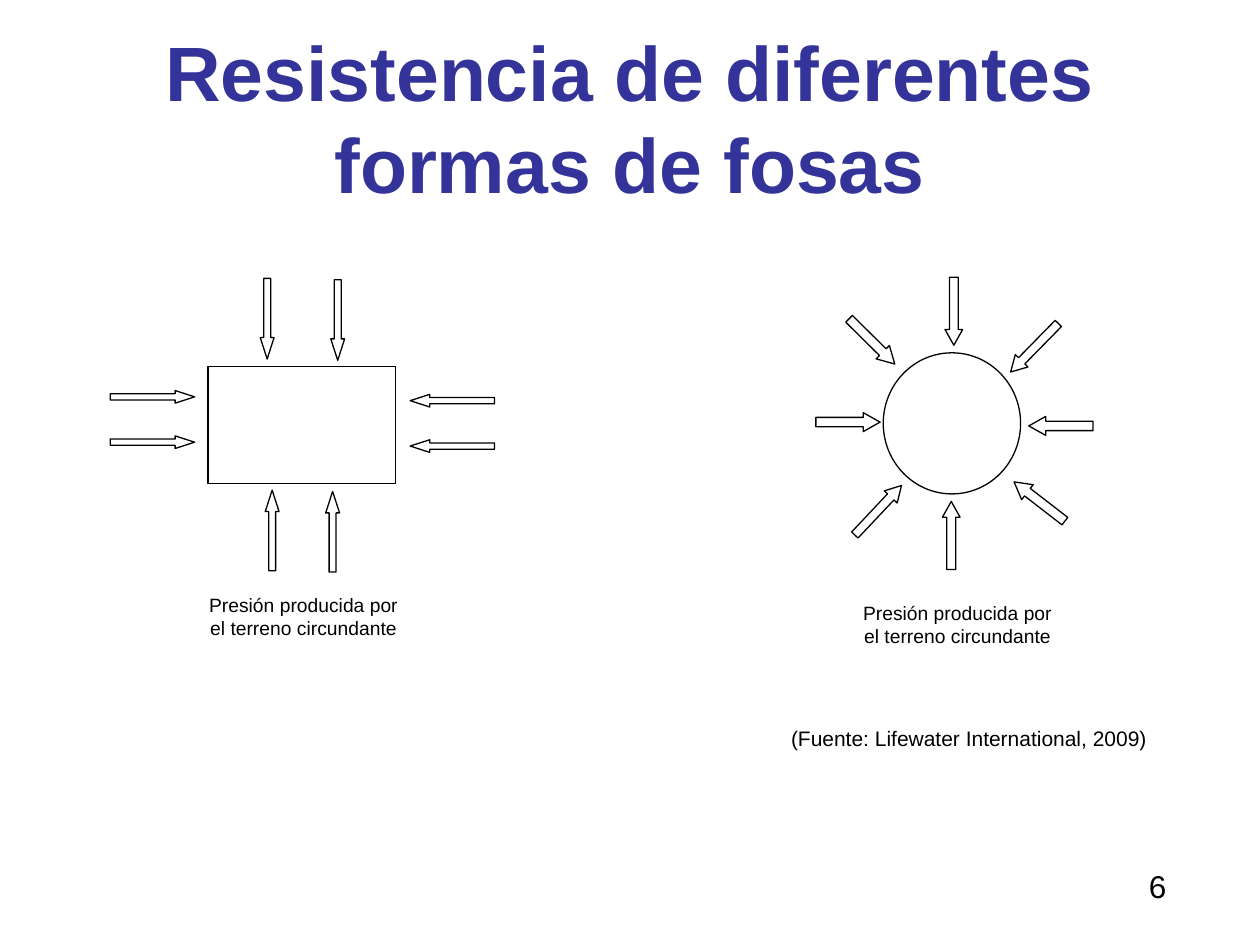
from pptx import Presentation
from pptx.dml.color import RGBColor
from pptx.enum import shapes, text
from pptx.util import Inches, Pt

BLUE = RGBColor(0x33, 0x33, 0x99)
BLACK = RGBColor(0, 0, 0)
WHITE = RGBColor(255, 255, 255)
KIND = shapes.MSO_SHAPE
LEFT, MID = text.PP_ALIGN.LEFT, text.PP_ALIGN.CENTER
NOTE = "Presión producida por el terreno circundante"

# Arrow centre x, centre y, clockwise turn in degrees
BOX_FLAT = [(1.21, 3.15, 0), (1.21, 3.51, 0), (3.59, 3.18, 180), (3.59, 3.54, 180)]
BOX_TALL = [(2.12, 2.53, 90), (2.68, 2.54, 90), (2.16, 4.21, 270), (2.64, 4.22, 270)]
RING_FLAT = [(6.73, 3.35, 0), (8.42, 3.38, 180), (8.25, 3.98, 217.7), (6.92, 2.71, 44.7)]
RING_TALL = [(7.55, 4.25, 270), (7.57, 2.47, 90), (8.21, 2.76, 134.5), (6.97, 4.05, 313.3)]


def add_text(parent, words, x, y, w, h, size, align=LEFT, color=BLACK, bold=False):
    box = parent.shapes.add_textbox(Inches(x), Inches(y), Inches(w), Inches(h))
    frame = box.text_frame
    frame.word_wrap = True
    par = frame.paragraphs[0]
    par.text = words
    par.alignment = align
    font = par.font
    font.name, font.size, font.bold = "Arial", Pt(size), bold
    font.color.rgb = color
    return box


def add_form(group, kind, x, y, w, h):
    form = group.shapes.add_shape(kind, Inches(x), Inches(y), Inches(w), Inches(h))
    form.shadow.inherit = False
    form.fill.solid()
    form.fill.fore_color.rgb = WHITE
    form.line.color.rgb = BLACK
    form.line.width = Pt(0.75)
    return form


def add_arrows(group, spots, w, h, head):
    """Draw arrows of one size; head is the head length over the height."""
    for x, y, turn in spots:
        arrow = add_form(group, KIND.RIGHT_ARROW, x - w / 2, y - h / 2, w, h)
        arrow.adjustments[0] = 0.5
        arrow.adjustments[1] = head
        arrow.rotation = turn


def add_box_pit(slide):
    group = slide.shapes.add_group_shape()
    add_form(group, KIND.RECTANGLE, 1.65, 2.91, 1.49, 0.93)
    add_arrows(group, BOX_FLAT, 0.67, 0.1, 1.55)
    add_arrows(group, BOX_TALL, 0.64, 0.11, 1.55)
    add_text(group, NOTE, 1.51, 4.66, 1.8, 0.99, 11, MID)


def add_round_pit(slide):
    group = slide.shapes.add_group_shape()
    add_form(group, KIND.OVAL, 7.01, 2.8, 1.09, 1.12)
    add_arrows(group, RING_FLAT, 0.51, 0.15, 0.89)
    add_arrows(group, RING_TALL, 0.54, 0.14, 0.89)
    add_text(group, NOTE, 6.7, 4.72, 1.8, 0.99, 11, MID)


def main():
    deck = Presentation()
    deck.slide_width, deck.slide_height = Inches(10), Inches(7.5)
    slide = deck.slides.add_slide(deck.slide_layouts[6])
    title = add_text(slide, "Resistencia de diferentes formas de fosas",
                     0.5, 0.3, 9, 1.25, 44, MID, BLUE, True)
    title.text_frame.vertical_anchor = text.MSO_ANCHOR.MIDDLE
    add_text(slide, "6", 9.02, 6.83, 0.48, 0.52, 18)
    add_box_pit(slide)
    add_round_pit(slide)
    source = add_text(slide, "(Fuente: Lifewater International, 2009)",
                      6.18, 5.71, 3.1, 0.51, 12)
    source.fill.solid()
    source.fill.fore_color.rgb = WHITE
    deck.save("out.pptx")


if __name__ == "__main__":
    main()
